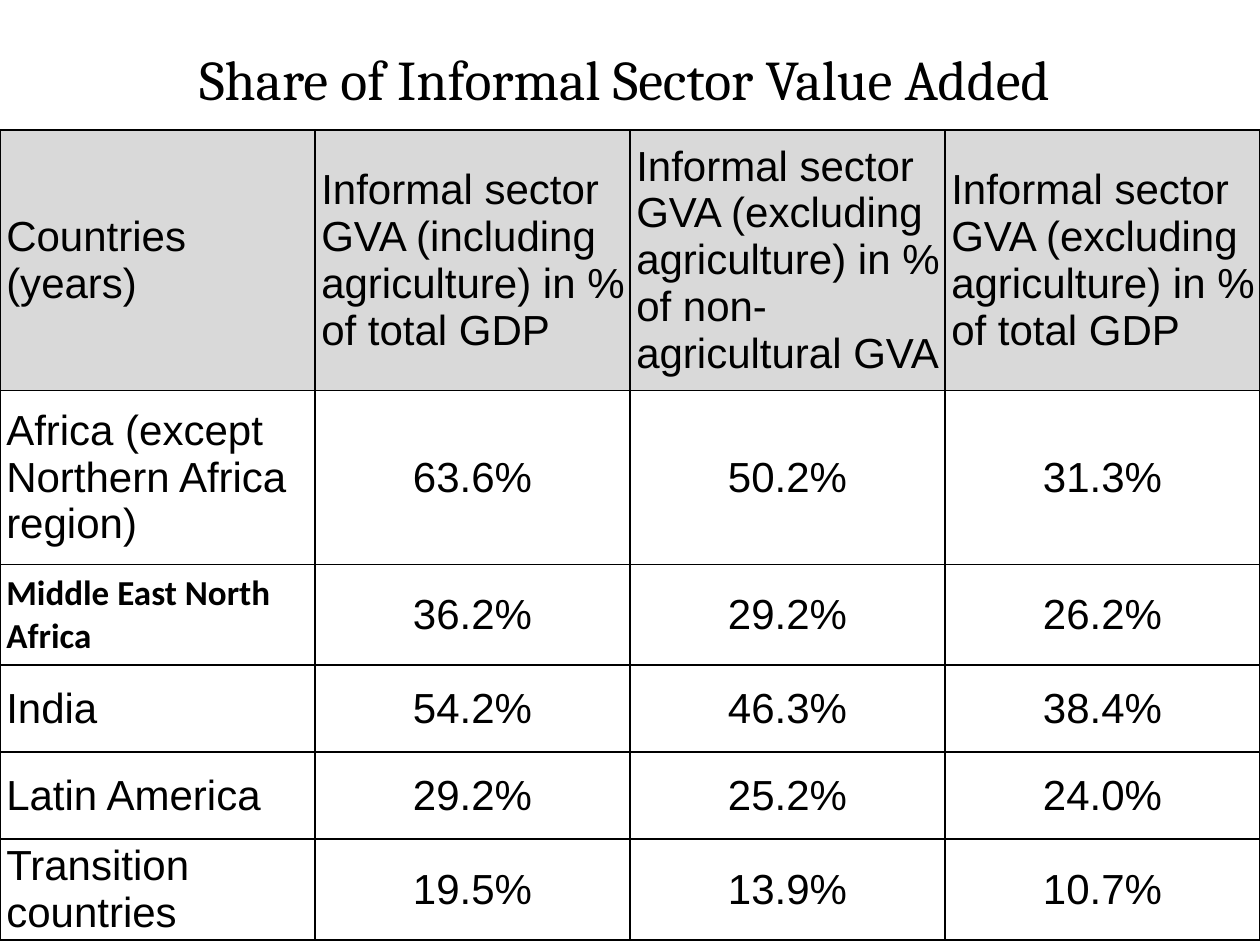
from lxml.etree import SubElement
from pptx import Presentation
from pptx.dml.color import RGBColor
from pptx.enum.text import MSO_ANCHOR as Anchor, PP_ALIGN as Align
from pptx.oxml.ns import qn
from pptx.util import Inches, Pt

# Content
TITLE = "Share of Informal Sector Value Added"
HEADER = (
    "Countries (years)",
    "Informal sector GVA (including agriculture) in % of total GDP",
    "Informal sector GVA (excluding agriculture) in % of non-agricultural GVA",
    "Informal sector GVA (excluding agriculture) in % of total GDP",
)
EMPHASIZED = "Middle East North Africa"
REGIONS = [
    ("Africa (except Northern Africa region)", "63.6%", "50.2%", "31.3%"),
    (EMPHASIZED, "36.2%", "29.2%", "26.2%"),
    ("India", "54.2%", "46.3%", "38.4%"),
    ("Latin America", "29.2%", "25.2%", "24.0%"),
    ("Transition countries", "19.5%", "13.9%", "10.7%"),
]
ROW_HEIGHTS = (2.07, 1.38, 0.8, 0.69, 0.69, 0.69)

# Fonts are (name, size, bold)
THEME = {
    "ink": "000000",
    "header_fill": "D9D9D9",
    "border_width": 1,
    "title": ("Cambria", 32, False),
    "body": ("Arial", 24, False),
    "emphasis": ("Calibri", 20, True),
}


def write(frame, text, style, align):
    frame.text = text
    para = frame.paragraphs[0]
    para.alignment = align
    font = para.runs[0].font
    font.name, size, font.bold = THEME[style]
    font.size = Pt(size)
    font.color.rgb = RGBColor.from_string(THEME["ink"])


def add_borders(cell):
    properties = cell._tc.get_or_add_tcPr()
    for index, side in enumerate(("lnL", "lnR", "lnT", "lnB")):
        line = SubElement(properties, qn(f"a:{side}"), w=str(Pt(THEME["border_width"])))
        fill = SubElement(line, qn("a:solidFill"))
        SubElement(fill, qn("a:srgbClr"), val=THEME["ink"])
        properties.insert(index, line)  # borders come before the fill


def add_title(page):
    box = page.shapes.add_textbox(Inches(0.17), Inches(0.21), Inches(9.58), Inches(0.82))
    frame = box.text_frame
    frame.word_wrap = True
    frame.vertical_anchor = Anchor.MIDDLE
    write(frame, TITLE, "title", Align.CENTER)


def add_share_table(page, width):
    rows = [HEADER, *REGIONS]
    table = page.shapes.add_table(
        len(rows), len(HEADER), 0, Inches(1.03), width, Inches(sum(ROW_HEIGHTS))
    ).table
    table.horz_banding = False
    for row, height in zip(table.rows, ROW_HEIGHTS):
        row.height = Inches(height)

    for r, values in enumerate(rows):
        for c, text in enumerate(values):
            cell = table.cell(r, c)
            cell.margin_left = Inches(0.05)
            # The header needs slightly more room for its longest line
            cell.margin_right = Inches(0.05 if r else 0.03)
            cell.margin_top = cell.margin_bottom = 0
            cell.vertical_anchor = Anchor.MIDDLE
            if r == 0:
                cell.fill.solid()
                cell.fill.fore_color.rgb = RGBColor.from_string(THEME["header_fill"])
            else:
                cell.fill.background()
            add_borders(cell)
            style = "emphasis" if text == EMPHASIZED else "body"
            write(cell.text_frame, text, style, Align.CENTER if r and c else Align.LEFT)


def main():
    deck = Presentation()
    deck.slide_width, deck.slide_height = Inches(10), Inches(7.5)
    page = deck.slides.add_slide(deck.slide_layouts[6])
    add_title(page)
    add_share_table(page, deck.slide_width)
    deck.save("out.pptx")


if __name__ == "__main__":
    main()
